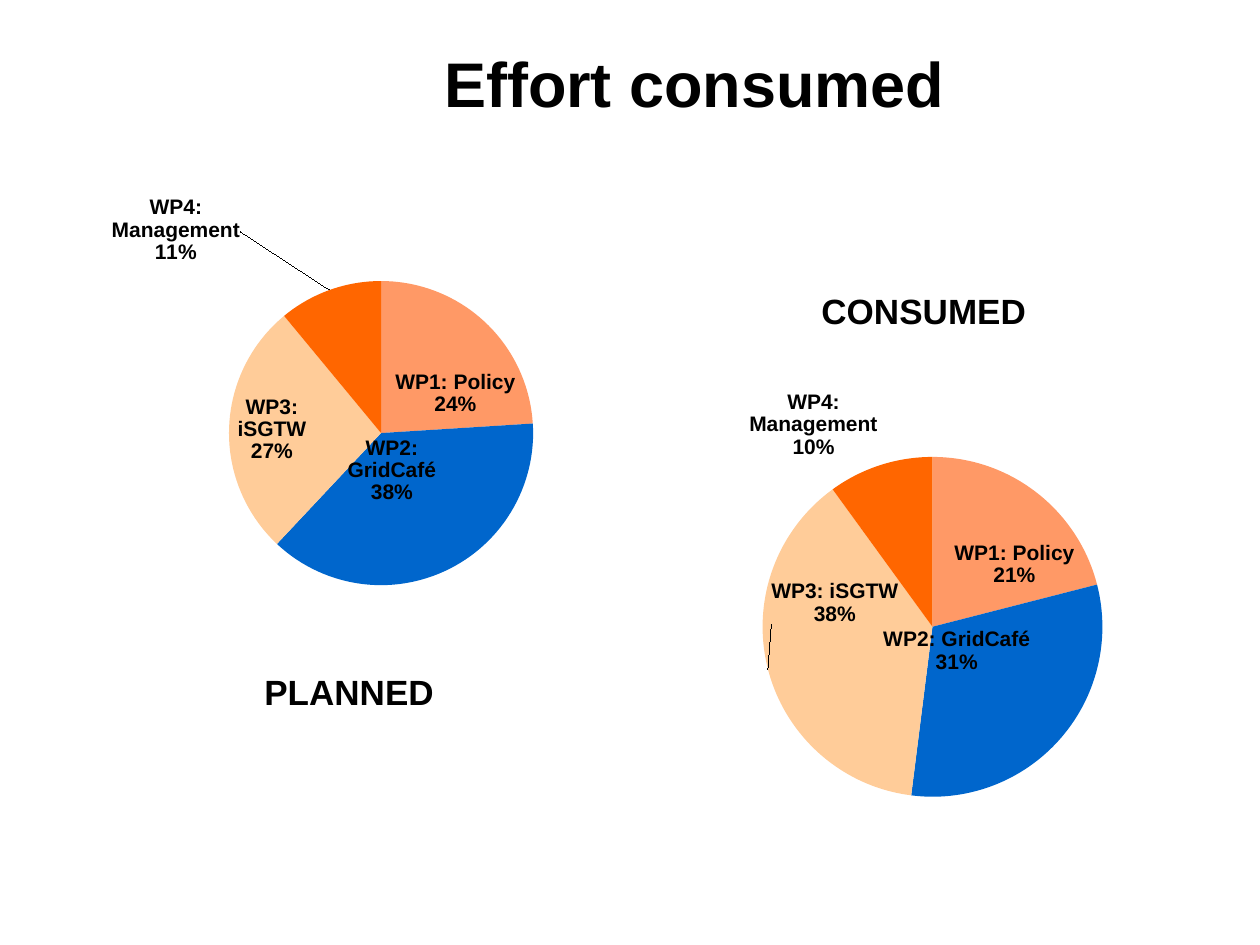
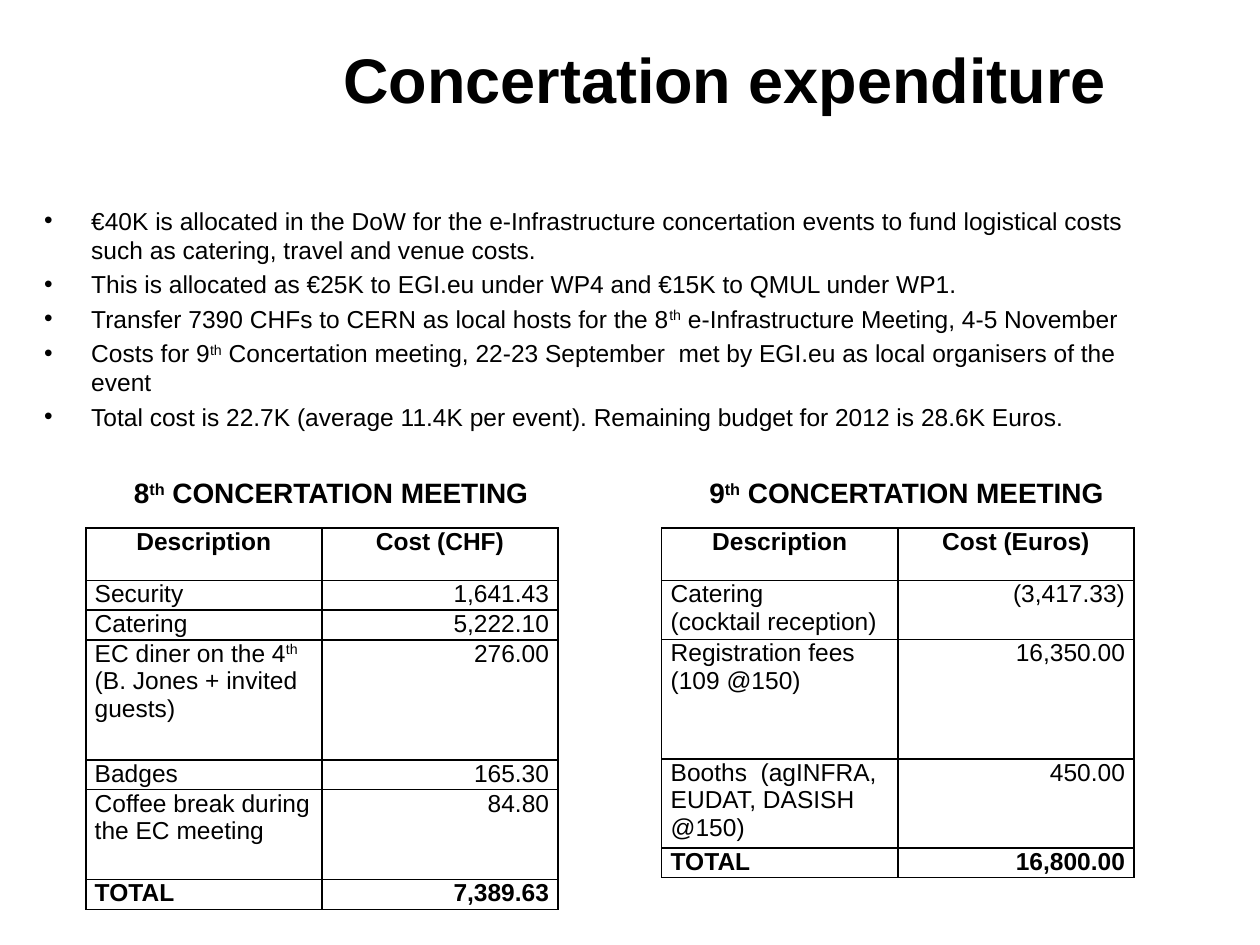
from lxml import etree
from pptx import Presentation
from pptx.chart.data import CategoryChartData
from pptx.dml.color import RGBColor
from pptx.enum.chart import XL_CHART_TYPE as ChartType
from pptx.enum.text import MSO_ANCHOR as Anchor, PP_ALIGN as Align
from pptx.oxml import parse_xml
from pptx.oxml.ns import nsdecls, qn
from pptx.util import Cm, Pt

FONT = "Arial"
BLACK, WHITE = "000000", "FFFFFF"
SLICE_COLORS = ["FF9966", "0066CC", "FFCC99", "FF6600"]
WORK_PACKAGES = ["WP1: Policy", "WP2: GridCafé", "WP3: iSGTW", "WP4: Management"]
color = RGBColor.from_string


def add_runs(paragraph, text, size, bold=False, align=Align.LEFT):
    paragraph.alignment = align
    for line_number, line in enumerate(text.split("\n")):
        if line_number:
            paragraph.add_line_break()
        for position, part in enumerate(line.split("^")):
            if not part:
                continue
            run = paragraph.add_run()
            run.text = part
            run.font.name = FONT
            run.font.size = Pt(size)
            run.font.bold = bold
            run.font.color.rgb = color(BLACK)
            if position % 2:
                run._r.get_or_add_rPr().set("baseline", "30000")


def add_box(slide, place, text, size, align=Align.LEFT, anchor=Anchor.TOP):
    frame = slide.shapes.add_textbox(*map(Cm, place)).text_frame
    frame.word_wrap = True
    frame.vertical_anchor = anchor
    add_runs(frame.paragraphs[0], text, size, True, align)


presentation = Presentation()
presentation.slide_width, presentation.slide_height = Cm(25.4), Cm(19.05)
titles = [("Effort consumed", 2.57, 0.08), ("Concertation expenditure", 3.18, -0.02)]
slides = []
for title, left, top in titles:
    slide = presentation.slides.add_slide(presentation.slide_layouts[6])
    add_box(slide, (left, top, 22.86, 3.18), title, 36, Align.CENTER, Anchor.MIDDLE)
    slides.append(slide)
effort_slide, expenditure_slide = slides

pies = [
    ("PLANNED", (5.08, 13.39), (-0.64, 3.96, 14.6, 9.45), (24, 38, 27, 11),
     (0.36, 0.18, 0.42, 0.65), {1: (-0.14, -0.3), 3: (-0.12, -0.11)}),
    ("CONSUMED", (16.31, 5.72), (10.36, 7.42, 16.71, 9.32), (21, 31, 38, 10),
     (0.3, 0.19, 0.41, 0.74), {1: (-0.22, -0.25)}),
]
LABEL_CONTENT = (
    '<c:showLegendKey val="0"/><c:showVal val="0"/><c:showCatName val="1"/>'
    '<c:showSerName val="0"/><c:showPercent val="1"/><c:showBubbleSize val="0"/>'
    "<c:separator>\n</c:separator>")
LABEL_STYLE = (
    '<c:numFmt formatCode="0%" sourceLinked="0"/><c:spPr><a:noFill/></c:spPr>'
    '<c:txPr><a:bodyPr/><a:p><a:pPr><a:defRPr sz="1200" b="1"><a:solidFill>'
    f'<a:srgbClr val="{BLACK}"/></a:solidFill><a:latin typeface="{FONT}"/></a:defRPr>'
    '</a:pPr><a:endParaRPr lang="en-GB"/></a:p></c:txPr><c:dLblPos val="bestFit"/>')

for caption, caption_place, place, shares, plot_place, label_offsets in pies:
    data = CategoryChartData()
    data.categories = WORK_PACKAGES
    data.add_series("Series 1", shares)
    chart = effort_slide.shapes.add_chart(ChartType.PIE, *map(Cm, place), data).chart
    chart.has_legend = False
    chart.has_title = False
    chart.font.name = FONT
    chart.font.size = Pt(10)
    chart.font.color.rgb = color(BLACK)
    plot = chart.plots[0]
    plot.vary_by_categories = True
    series = plot.series[0]
    for index, slice_color in enumerate(SLICE_COLORS):
        fill = series.points[index].format.fill
        fill.solid()
        fill.fore_color.rgb = color(slice_color)

    point_labels = "".join(
        f'<c:dLbl><c:idx val="{index}"/><c:layout><c:manualLayout><c:x val="{x}"/>'
        f'<c:y val="{y}"/></c:manualLayout></c:layout>{LABEL_STYLE}{LABEL_CONTENT}</c:dLbl>'
        for index, (x, y) in label_offsets.items())
    labels = parse_xml(
        f'<c:dLbls {nsdecls("c", "a")}>{point_labels}{LABEL_STYLE}{LABEL_CONTENT}'
        '<c:showLeaderLines val="1"/></c:dLbls>')
    series._element.find(qn("c:cat")).addprevious(labels)

    plot_area = plot._element.getparent()
    for old_layout in plot_area.findall(qn("c:layout")):
        plot_area.remove(old_layout)
    x, y, width, height = plot_place
    plot_area.insert(0, parse_xml(
        f'<c:layout {nsdecls("c")}><c:manualLayout><c:layoutTarget val="inner"/>'
        '<c:xMode val="edge"/><c:yMode val="edge"/>'
        f'<c:x val="{x}"/><c:y val="{y}"/><c:w val="{width}"/><c:h val="{height}"/>'
        "</c:manualLayout></c:layout>"))
    add_box(effort_slide, (*caption_place, 5.28, 1.12), caption, 20)

bullets = [
    "€40K is allocated in the DoW for the e-Infrastructure concertation events to fund "
    "logistical costs such as catering, travel and venue costs.",
    "This is allocated as €25K to EGI.eu under WP4 and €15K to QMUL under WP1.",
    "Transfer 7390 CHFs to CERN as local hosts for the 8^th^ e-Infrastructure Meeting, "
    "4-5 November",
    "Costs for 9^th^ Concertation meeting, 22-23 September  met by EGI.eu as local "
    "organisers of the event",
    "Total cost is 22.7K (average 11.4K per event). Remaining budget for 2012 is 28.6K Euros.",
]
frame = expenditure_slide.shapes.add_textbox(Cm(0.64), Cm(4.02), Cm(22.86), Cm(2.11)).text_frame
frame.word_wrap = True
for index, bullet in enumerate(bullets):
    paragraph = frame.paragraphs[0] if index == 0 else frame.add_paragraph()
    properties = paragraph._p.get_or_add_pPr()
    properties.set("marL", str(Cm(0.95)))
    properties.set("indent", str(-Cm(0.95)))
    etree.SubElement(properties, qn("a:buFont")).set("typeface", FONT)
    etree.SubElement(properties, qn("a:buChar")).set("char", "•")
    if index:
        paragraph.space_before = Pt(2.8)
    add_runs(paragraph, bullet, 14)

meetings = [
    ("8^th^ CONCERTATION MEETING", 2.13, 1.73, [
        ("Description", "Cost (CHF)", 1.06),
        ("Security", "1,641.43", 0.6),
        ("Catering", "5,222.10", 0.6),
        ("EC diner on the 4^th^¶(B. Jones + invited guests)", "276.00", 2.42),
        ("Badges", "165.30", 0.6),
        ("Coffee break during the EC meeting", "84.80", 1.81),
        ("TOTAL", "7,389.63", 0.6)]),
    ("9^th^ CONCERTATION MEETING", 13.73, 13.34, [
        ("Description", "Cost (Euros)", 1.06),
        ("Catering\n(cocktail reception)", "(3,417.33)", 1.19),
        ("Registration fees (109 @150)", "16,350.00", 2.41),
        ("Booths  (agINFRA, EUDAT, DASISH @150)", "450.00", 1.79),
        ("TOTAL", "16,800.00", 0.6)]),
]
for heading, heading_left, table_left, rows in meetings:
    add_box(expenditure_slide, (heading_left, 9.46, 9.09, 0.94), heading, 16, Align.CENTER)
    total_height = sum(height for _, _, height in rows)
    table = expenditure_slide.shapes.add_table(
        len(rows), 2, Cm(table_left), Cm(10.64), Cm(9.52), Cm(total_height)).table
    for column in table.columns:
        column.width = Cm(4.76)
    for row_index, (description, cost, height) in enumerate(rows):
        table.rows[row_index].height = Cm(height)
        is_header = row_index == 0
        is_bold = is_header or description == "TOTAL"
        for column_index, text in enumerate((description, cost)):
            cell = table.cell(row_index, column_index)
            cell.margin_left = cell.margin_right = Cm(0.18)
            cell.margin_top = cell.margin_bottom = 0
            align = Align.CENTER if is_header else (Align.LEFT, Align.RIGHT)[column_index]
            for line_index, line in enumerate(text.split("¶")):
                cell_frame = cell.text_frame
                paragraph = cell_frame.add_paragraph() if line_index else cell_frame.paragraphs[0]
                add_runs(paragraph, line, 14, is_bold, align)
            cell_properties = cell._tc.get_or_add_tcPr()
            for side in ("lnL", "lnR", "lnT", "lnB"):
                cell_properties.append(parse_xml(
                    f'<a:{side} {nsdecls("a")} w="12700"><a:solidFill>'
                    f'<a:srgbClr val="{BLACK}"/></a:solidFill></a:{side}>'))
            cell.fill.solid()
            cell.fill.fore_color.rgb = color(WHITE)

presentation.save("out.pptx")
